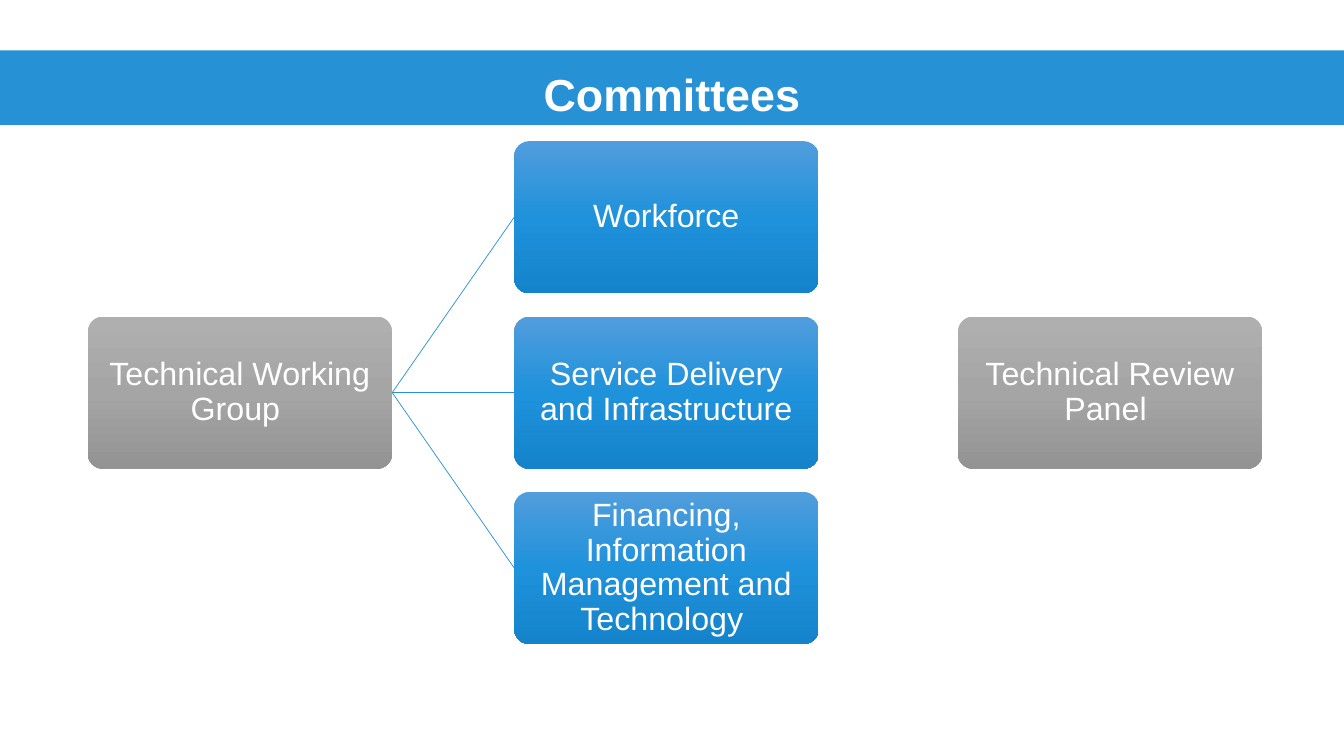
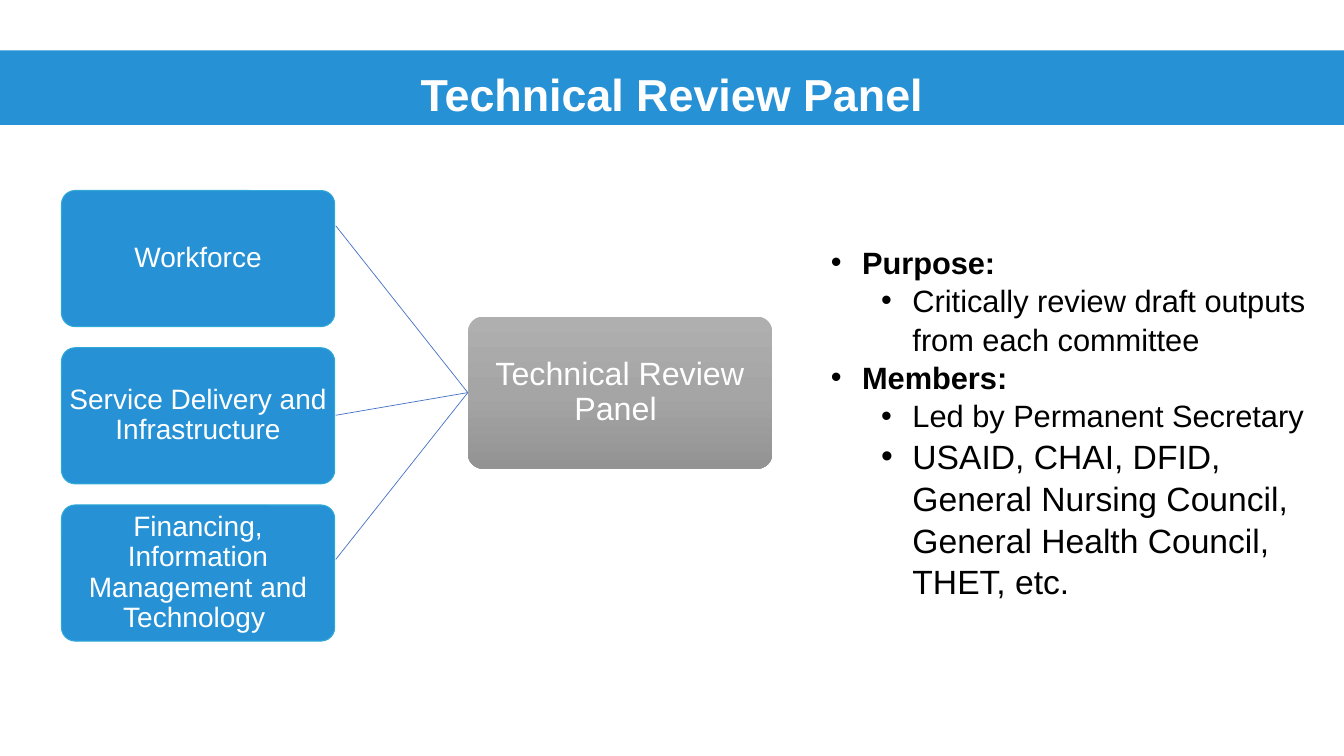
from dataclasses import dataclass

from copy import deepcopy
from lxml import etree
from pptx import Presentation
from pptx.dml.color import RGBColor as Rgb
from pptx.enum.shapes import MSO_CONNECTOR as Connector, MSO_SHAPE as Preset
from pptx.enum.text import MSO_ANCHOR as Anchor, MSO_AUTO_SIZE as AutoSize, PP_ALIGN as Align
from pptx.oxml.ns import qn
from pptx.util import Inches, Pt


@dataclass(frozen=True)
class Theme:
    font: str = "Arial"
    white: str = "FFFFFF"
    black: str = "000000"
    band: str = "2791D5"
    card_edge: str = "2FAAD8"
    tree_line: str = "2890D3"
    review_line: str = "4472C4"
    blue_shades: tuple = ("519DDC", "1F92DC", "1483CB")
    gray_shades: tuple = ("AFAFAF", "A5A5A5", "939393")
    title_size: int = 32
    large_size: int = 23
    small_size: int = 20
    list_size: int = 22
    members_size: int = 24


THEME = Theme()


@dataclass(frozen=True)
class CardStyle:
    width: float
    height: float
    shades: tuple
    size: int
    inset: float
    edge: str = ""


@dataclass(frozen=True)
class Bullet:
    text: str
    level: int = 0
    size: int = THEME.list_size


GRAY_CARD = CardStyle(3.02, 1.51, THEME.gray_shades, THEME.large_size, 0.02)
BLUE_CARD = CardStyle(3.02, 1.51, THEME.blue_shades, THEME.large_size, 0.02)
FLAT_CARD = CardStyle(2.71, 1.35, (THEME.band,), THEME.small_size, 0.01, THEME.card_edge)

COMMITTEES = (
    "Workforce",
    "Service Delivery and Infrastructure",
    "Financing, Information Management and Technology ",
)
REVIEW_PANEL = "Technical Review Panel "
MIDDLE_TOP = 3.14
REVIEW_STARTS = (2.24, 4.12, 5.55)
BULLETS = (
    Bullet("Purpose:"),
    Bullet("Critically review draft outputs from each committee", 1),
    Bullet("Members:"),
    Bullet("Led by Permanent Secretary", 1),
    Bullet("USAID, CHAI, DFID, General Nursing Council, General Health Council, THET, etc.",
           1, THEME.members_size),
)


def place(shape, left: float, top: float, width: float, height: float) -> None:
    shape.left, shape.top = Inches(left), Inches(top)
    shape.width, shape.height = Inches(width), Inches(height)


def style_font(para, size: int, color: str, bold: bool = False) -> None:
    font = para.font
    font.name, font.size, font.bold = THEME.font, Pt(size), bold
    font.color.rgb = Rgb.from_string(color)


def fill_shades(shape, shades: tuple) -> None:
    """Fill with one colour, or with evenly spaced shades from top to bottom."""
    fill = shape.fill
    if len(shades) == 1:
        fill.solid()
        fill.fore_color.rgb = Rgb.from_string(shades[0])
        return
    fill.gradient()
    fill.gradient_angle = 270
    stop_list = shape.element.spPr.find(".//" + qn("a:gsLst"))
    while len(stop_list) < len(shades):
        stop_list.append(deepcopy(stop_list[0]))
    for index, (stop, shade) in enumerate(zip(fill.gradient_stops, shades)):
        stop.position = index / (len(shades) - 1)
        stop.color.rgb = Rgb.from_string(shade)


def add_band(deck, page) -> None:
    """Put the title band on the master, behind everything else."""
    band = page.shapes.add_shape(Preset.RECTANGLE, 0, Inches(0.5), deck.slide_width, Inches(0.74))
    band.shadow.inherit = False
    fill_shades(band, (THEME.band,))
    band.line.fill.background()
    deck.slide_master.shapes.element.insert(2, band.element)


def add_page(deck, layout: int, title: str):
    page = deck.slides.add_slide(deck.slide_layouts[layout])
    box = page.shapes.title
    place(box, 0.81, 0.61, 11.71, 0.64)
    frame = box.text_frame
    frame.text = title
    frame.auto_size = AutoSize.NONE
    frame.vertical_anchor = Anchor.TOP
    para = frame.paragraphs[0]
    para.alignment = Align.CENTER
    style_font(para, THEME.title_size, THEME.white, True)
    return page


def add_card(page, text: str, left: float, top: float, style: CardStyle):
    card = page.shapes.add_shape(Preset.ROUNDED_RECTANGLE, Inches(left), Inches(top),
                                 Inches(style.width), Inches(style.height))
    card.adjustments[0] = 0.1
    card.shadow.inherit = False
    fill_shades(card, style.shades)
    if style.edge:
        card.line.color.rgb = Rgb.from_string(style.edge)
        card.line.width = Pt(0.75)
    else:
        card.line.fill.background()
    frame = card.text_frame
    frame.text = text
    frame.word_wrap = True
    frame.vertical_anchor = Anchor.MIDDLE
    frame.margin_left = frame.margin_right = Inches(style.inset)
    frame.margin_top = frame.margin_bottom = Inches(style.inset)
    para = frame.paragraphs[0]
    para.alignment = Align.CENTER
    para.line_spacing = 0.9
    style_font(para, style.size, THEME.white)
    return card


def add_column(page, left: float, middle_top: float, pitch: float, style: CardStyle) -> list:
    """Stack the committees evenly around the middle card."""
    return [add_card(page, text, left, middle_top + (row - 1) * pitch, style)
            for row, text in enumerate(COMMITTEES)]


def add_line(page, start_x: int, start_y: int, target, color: str):
    """Draw a thin line to the left side of the target card."""
    line = page.shapes.add_connector(Connector.STRAIGHT, start_x, start_y, target.left, target.top)
    line.end_connect(target, 1)
    line.line.color.rgb = Rgb.from_string(color)
    line.line.width = Pt(0.5)
    etree.SubElement(line.element.spPr, qn("a:effectLst"))
    return line


def add_bullets(page) -> None:
    box = page.placeholders[1]
    place(box, 8.14, 2.35, 5.2, 3.94)
    frame = box.text_frame
    frame.auto_size = AutoSize.NONE
    for index, bullet in enumerate(BULLETS):
        para = frame.add_paragraph() if index else frame.paragraphs[0]
        para.text = bullet.text
        para.level = bullet.level
        para.space_before = Pt(0)
        para.line_spacing = 1.04
        properties = para._p.get_or_add_pPr()
        properties.set("marL", str(Inches(0.31 + 0.5 * bullet.level)))
        properties.set("indent", str(Inches(-0.31)))
        etree.SubElement(properties, qn("a:buFont"), typeface=THEME.font)
        etree.SubElement(properties, qn("a:buChar"), char="•")
        style_font(para, bullet.size, THEME.black, bullet.level == 0)


def build_committees(deck):
    page = add_page(deck, 5, "Committees")
    group = add_card(page, "Technical Working Group ", 0.87, MIDDLE_TOP, GRAY_CARD)
    for committee in add_column(page, 5.1, MIDDLE_TOP, 1.74, BLUE_CARD):
        line = add_line(page, group.left, group.top, committee, THEME.tree_line)
        line.begin_connect(group, 3)
    add_card(page, REVIEW_PANEL, 9.5, MIDDLE_TOP, GRAY_CARD)
    return page


def build_review_panel(deck) -> None:
    page = add_page(deck, 1, "Technical Review Panel")
    add_column(page, 0.61, 3.45, 1.56, FLAT_CARD)
    panel = add_card(page, REVIEW_PANEL, 4.64, MIDDLE_TOP, GRAY_CARD)
    for start in REVIEW_STARTS:
        add_line(page, Inches(3.33), Inches(start), panel, THEME.review_line)
    add_bullets(page)


def main() -> None:
    deck = Presentation()
    deck.slide_width, deck.slide_height = Inches(13.33), Inches(7.5)
    first_page = build_committees(deck)
    add_band(deck, first_page)
    build_review_panel(deck)
    deck.save("out.pptx")


if __name__ == "__main__":
    main()
